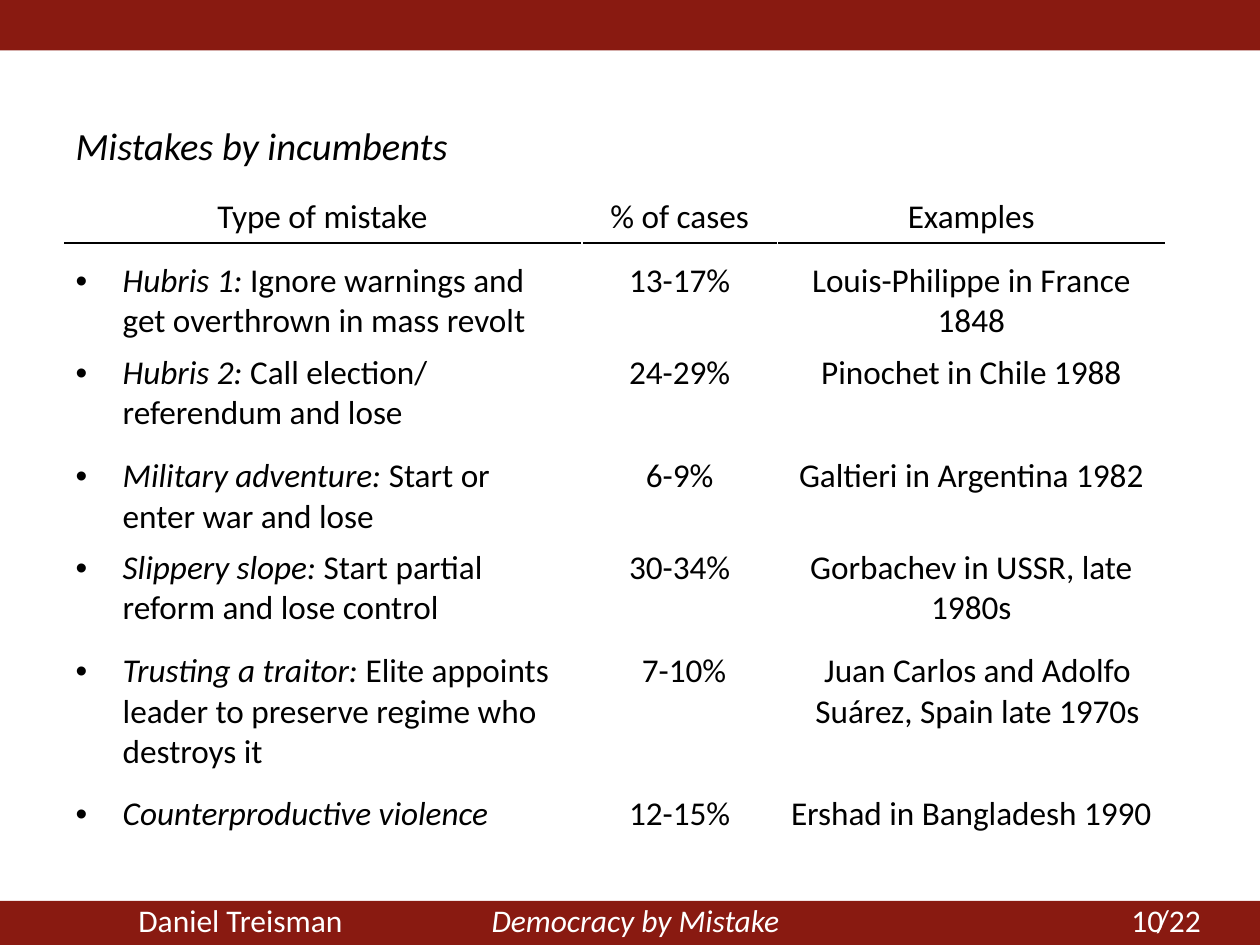
from lxml import etree
from pptx import Presentation
from pptx.dml.color import RGBColor
from pptx.enum import shapes, text
from pptx.oxml import ns
from pptx.util import Cm, Pt

COLORS = {"band": "891A11", "ink": "000000", "light": "FFFFFF"}
FONT = "Calibri"
LEFT = 1.27
COLUMNS = (10.46, 3.94, 7.82)
WIDE_COLUMNS = (10.54, 3.96, 7.87)
LINE_HEIGHT, CELL_PADDING = 0.8, 0.25
MISTAKES = [
    (5.13, 2, COLUMNS, "Hubris 1: ", "Ignore warnings and get overthrown in mass revolt",
     "13-17%", "Louis-Philippe in France 1848"),
    (6.99, 2, COLUMNS, "Hubris 2: ", "Call election/ referendum and lose",
     "24-29%", "Pinochet in Chile 1988"),
    (9.07, 2, COLUMNS, "Military adventure: ", "Start or enter war and lose",
     "6-9%", "Galtieri in Argentina 1982"),
    (10.92, 2, COLUMNS, "Slippery slope: ", "Start partial reform and lose control",
     "30-34%", "Gorbachev in USSR, late 1980s"),
    (13.0, 3, WIDE_COLUMNS, "Trusting a traitor: ",
     "Elite appoints leader to preserve regime who destroys it",
     "7-10%", "Juan Carlos and Adolfo Suárez, Spain late 1970s"),
    (15.88, 1, COLUMNS, "Counterproductive violence", "",
     "12-15%", "Ershad in Bangladesh 1990"),
]


def add_run(paragraph, wording, size, color="ink", italic=False):
    """Append one formatted run."""
    run = paragraph.add_run()
    run.text = wording
    run.font.name = FONT
    run.font.size = Pt(size)
    run.font.bold = False
    run.font.italic = italic
    run.font.color.rgb = RGBColor.from_string(COLORS[color])


def add_band(slide, top, height):
    """Draw a full-width coloured band and return it."""
    band = slide.shapes.add_shape(
        shapes.MSO_SHAPE.RECTANGLE, Cm(0), Cm(top), Cm(25.4), Cm(height))
    band.shadow.inherit = False
    band.fill.solid()
    band.fill.fore_color.rgb = RGBColor.from_string(COLORS["band"])
    band.line.fill.background()
    return band


def set_tabs(paragraph, stops):
    """Give a paragraph left tab stops, in centimetres."""
    tabs = etree.SubElement(paragraph._p.get_or_add_pPr(), ns.qn("a:tabLst"))
    for stop in stops:
        etree.SubElement(tabs, ns.qn("a:tab"), pos=str(Cm(stop)), algn="l")


def add_footer(slide):
    """Add the footer band with author, book title and page count."""
    frame = add_band(slide, 18.16, 0.89).text_frame
    frame.margin_top = 0
    frame.vertical_anchor = text.MSO_ANCHOR.TOP
    credits = frame.paragraphs[0]
    credits.alignment = text.PP_ALIGN.LEFT
    set_tabs(credits, (2.54, 9.66, 23.07))
    add_run(credits, "\tDaniel Treisman", 18, "light")
    add_run(credits, "\tDemocracy by Mistake", 18, "light", italic=True)
    add_run(credits, "\t/22", 18, "light")

    page = slide.shapes.add_textbox(Cm(17.78), Cm(18.03), Cm(5.92), Cm(1.02)).text_frame
    page.word_wrap = True
    page.vertical_anchor = text.MSO_ANCHOR.MIDDLE
    page.paragraphs[0].alignment = text.PP_ALIGN.RIGHT
    add_run(page.paragraphs[0], "10", 18, "light")


def add_heading(slide, wording):
    """Place the slide title."""
    heading = slide.shapes.title
    heading.left, heading.top = Cm(LEFT), Cm(2.34)
    heading.width, heading.height = Cm(22.3), Cm(3)
    frame = heading.text_frame
    frame.auto_size = text.MSO_AUTO_SIZE.NONE
    frame.vertical_anchor = text.MSO_ANCHOR.TOP
    frame.paragraphs[0].alignment = text.PP_ALIGN.LEFT
    add_run(frame.paragraphs[0], wording, 22, italic=True)


def add_row_table(slide, top, lines, widths):
    """Add a plain one-row table and return its cells."""
    height = Cm(lines * LINE_HEIGHT + CELL_PADDING)
    table = slide.shapes.add_table(
        1, len(widths), Cm(LEFT), Cm(top), Cm(sum(widths)), height).table
    table.first_row = table.horz_banding = False
    for column, width in zip(table.columns, widths):
        column.width = Cm(width)
    cells = list(table.rows[0].cells)
    for cell in cells:
        cell.fill.background()
    return cells


def fill_centered(cell, wording):
    """Write centred wording in a cell."""
    paragraph = cell.text_frame.paragraphs[0]
    paragraph.alignment = text.PP_ALIGN.CENTER
    add_run(paragraph, wording, 19)


def rule_below(cell):
    """Draw a rule along the bottom of a cell."""
    rule = etree.Element(ns.qn("a:lnB"), w=str(Pt(1)))
    fill = etree.SubElement(rule, ns.qn("a:solidFill"))
    etree.SubElement(fill, ns.qn("a:srgbClr"), val=COLORS["ink"])
    cell._tc.get_or_add_tcPr().insert(0, rule)


def add_header(slide, labels):
    """Add the underlined column headings."""
    for cell, label in zip(add_row_table(slide, 3.84, 1, COLUMNS), labels):
        fill_centered(cell, label)
        rule_below(cell)


def add_mistake(slide, top, lines, widths, kind, detail, share, example):
    """Add one bulleted mistake with its share and example."""
    cells = add_row_table(slide, top, lines, widths)
    mistake = cells[0].text_frame.paragraphs[0]
    properties = mistake._p.get_or_add_pPr()
    properties.set("marL", str(Cm(0.95)))
    properties.set("indent", str(-Cm(0.95)))
    etree.SubElement(properties, ns.qn("a:buFont"), typeface="Arial")
    etree.SubElement(properties, ns.qn("a:buChar"), char="•")
    add_run(mistake, kind, 19, italic=True)
    if detail:
        add_run(mistake, detail, 19)
    fill_centered(cells[1], share)
    fill_centered(cells[2], example)


def main():
    """Build and save the slide."""
    deck = Presentation()
    deck.slide_width, deck.slide_height = Cm(25.4), Cm(19.05)
    slide = deck.slides.add_slide(deck.slide_layouts[5])
    add_footer(slide)
    add_band(slide, 0, 1.02)
    add_heading(slide, "Mistakes by incumbents")
    add_header(slide, ("Type of mistake", "% of cases", "Examples"))
    for mistake in MISTAKES:
        add_mistake(slide, *mistake)
    deck.save("out.pptx")


if __name__ == "__main__":
    main()
